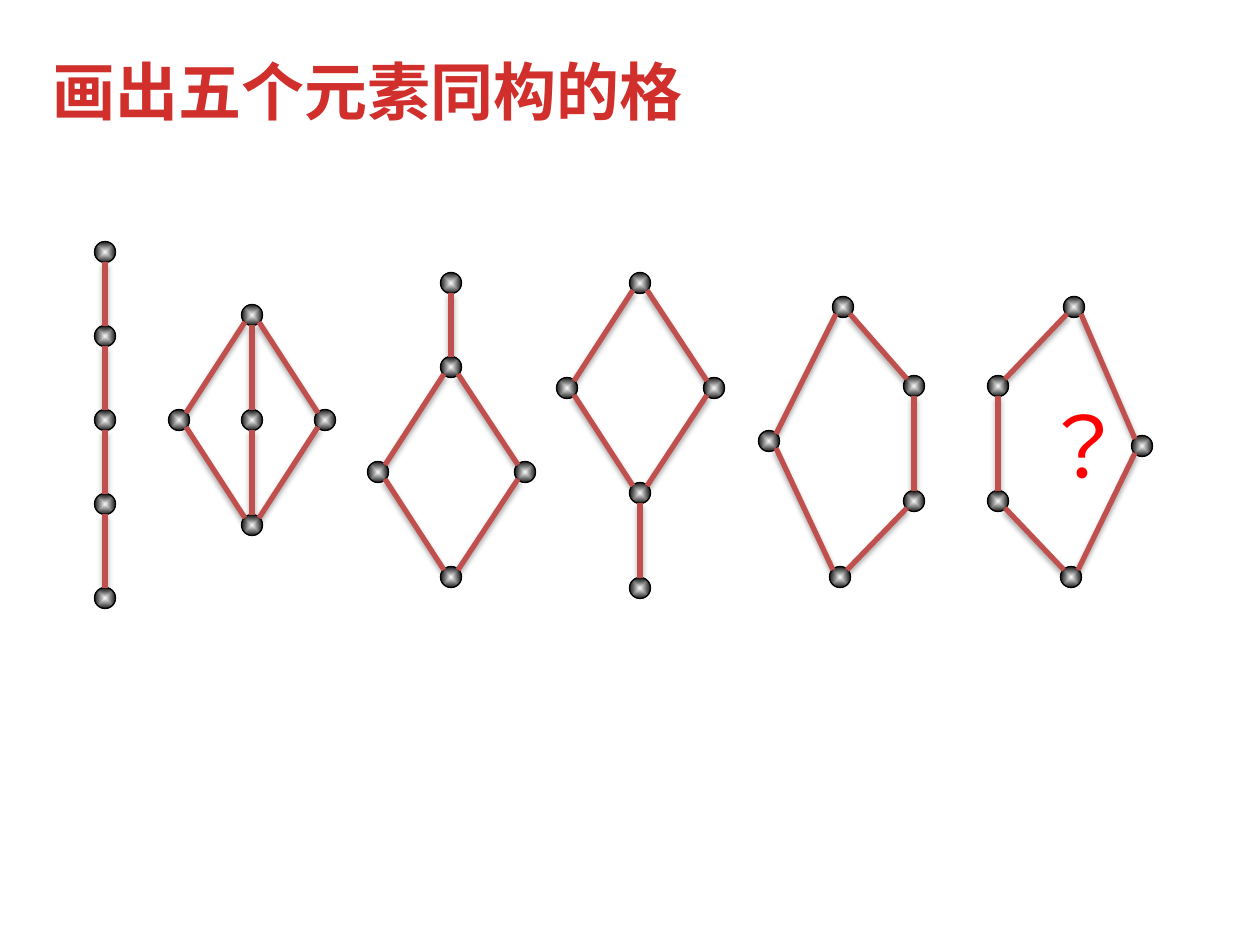
from lxml import etree
from pptx import Presentation
from pptx.dml.color import RGBColor
from pptx.enum.shapes import MSO_CONNECTOR, MSO_SHAPE
from pptx.enum.text import MSO_ANCHOR, PP_ALIGN
from pptx.util import Pt

CIRCLE = MSO_SHAPE.OVAL
STRAIGHT = MSO_CONNECTOR.STRAIGHT
CENTER = PP_ALIGN.CENTER
MIDDLE = MSO_ANCHOR.MIDDLE
A = 'xmlns:a="http://schemas.openxmlformats.org/drawingml/2006/main"'
SCALE = 914400 / 126
NODE = 21
RADIUS = 10
DIAGONAL = 7
COLORS = {"node": "000000", "glow": "FFFFFF", "edge": "C0504D",
          "title_top": "FC7C7A", "title_mid": "D02F2C", "title_end": "C70500",
          "title_shadow": "EEECE1", "question": "FF0000", "outline": "C00000"}

NODE_FILL = f"""<a:gradFill {A}><a:gsLst>
<a:gs pos="0"><a:srgbClr val="{COLORS['glow']}"/></a:gs>
<a:gs pos="100000"><a:srgbClr val="{COLORS['node']}"><a:alpha val="92000"/></a:srgbClr></a:gs>
</a:gsLst><a:path path="shape"><a:fillToRect l="50000" t="50000" r="50000" b="50000"/></a:path></a:gradFill>"""
EDGE_SHADOW = f"""<a:effectLst {A}><a:outerShdw blurRad="39370" dist="22860" dir="5400000">
<a:srgbClr val="{COLORS['node']}"><a:alpha val="35000"/></a:srgbClr></a:outerShdw></a:effectLst>"""
TITLE_FILL = f"""<a:gradFill {A}><a:gsLst>
<a:gs pos="0"><a:srgbClr val="{COLORS['title_top']}"/></a:gs>
<a:gs pos="75000"><a:srgbClr val="{COLORS['title_mid']}"/></a:gs>
<a:gs pos="100000"><a:srgbClr val="{COLORS['title_end']}"/></a:gs>
</a:gsLst><a:lin ang="5400000"/></a:gradFill>"""
TITLE_SHADOW = f"""<a:effectLst {A}><a:outerShdw dist="25400" dir="2700000">
<a:srgbClr val="{COLORS['title_shadow']}"/></a:outerShdw></a:effectLst>"""
QUESTION_OUTLINE = f"""<a:ln {A} w="18415"><a:solidFill>
<a:srgbClr val="{COLORS['outline']}"/></a:solidFill></a:ln>"""
EAST_ASIAN = f'<a:ea {A} typeface="Noto Sans CJK JP"/>'

LATTICES = [
    ([(105, 252), (105, 336), (105, 420), (105, 504), (105, 598)],
     [(0, 1), (1, 2), (2, 3), (3, 4)]),
    ([(252, 315), (179, 420), (252, 420), (325, 420), (252, 525)],
     [(0, 1), (0, 2), (0, 3), (1, 4), (2, 4), (3, 4)]),
    ([(451, 283), (451, 367), (378, 472), (525, 472), (451, 577)],
     [(0, 1), (1, 2), (1, 3), (2, 4), (3, 4)]),
    ([(640, 283), (567, 388), (714, 388), (640, 493), (640, 588)],
     [(0, 1), (0, 2), (1, 3), (2, 3), (3, 4)]),
    ([(843, 307), (769, 441), (914, 386), (914, 501), (840, 577)],
     [(0, 1), (0, 2), (1, 4), (2, 3), (3, 4)]),
    ([(1074, 307), (998, 386), (1142, 446), (998, 501), (1071, 577)],
     [(0, 1), (0, 2), (1, 3), (2, 4), (3, 4)]),
]


def emu(*lengths):
    return [round(length * SCALE) for length in lengths]


def set_format(target, values):
    for attribute, value in values.items():
        setattr(target, attribute, value)


prs = Presentation()
prs.slide_width, prs.slide_height = emu(1260, 945)
slide = prs.slides.add_slide(prs.slide_layouts[5])

title = slide.shapes.title
title.left, title.top, title.width, title.height = emu(20, 45, 695, 90)
title.text_frame.text = "画出五个元素同构的格"
set_format(title.text_frame, {"word_wrap": True, "vertical_anchor": MIDDLE})
heading = title.text_frame.paragraphs[0]
heading.alignment = CENTER
heading_run = heading.runs[0]
set_format(heading_run.font, {"size": Pt(36), "bold": True, "name": "Arial"})
heading_props = heading_run._r.get_or_add_rPr()
heading_props.insert(0, etree.fromstring(TITLE_FILL))
heading_props.insert(1, etree.fromstring(TITLE_SHADOW))

for nodes, edges in LATTICES:
    lattice = slide.shapes.add_group_shape()
    for x, y in nodes:
        node = lattice.shapes.add_shape(
            CIRCLE, *emu(x - NODE / 2, y - NODE / 2, NODE, NODE))
        node._element.spPr.insert(2, etree.fromstring(NODE_FILL))
        node.line.color.rgb = RGBColor.from_string(COLORS["node"])
        node.line.width = Pt(0.75)
        node.shadow.inherit = False
    for upper, lower in edges:
        (x1, y1), (x2, y2) = nodes[upper], nodes[lower]
        side = (x2 > x1) - (x2 < x1)
        dx = side * DIAGONAL
        dy = DIAGONAL if side else RADIUS
        edge = lattice.shapes.add_connector(
            STRAIGHT, *emu(x1 + dx, y1 + dy, x2 - dx, y2 - dy))
        edge.line.color.rgb = RGBColor.from_string(COLORS["edge"])
        edge.line.width = Pt(3)
        edge._element.spPr.append(etree.fromstring(EDGE_SHADOW))

question = slide.shapes.add_textbox(*emu(1029, 388, 95, 115))
question.text_frame.word_wrap = True
question_run = question.text_frame.paragraphs[0].add_run()
question_run.text = "？"
set_format(question_run.font, {"size": Pt(48), "name": "Noto Sans CJK JP"})
question_run.font.color.rgb = RGBColor.from_string(COLORS["question"])
question_props = question_run._r.get_or_add_rPr()
question_props.insert(0, etree.fromstring(QUESTION_OUTLINE))
question_props.append(etree.fromstring(EAST_ASIAN))

prs.save("out.pptx")
